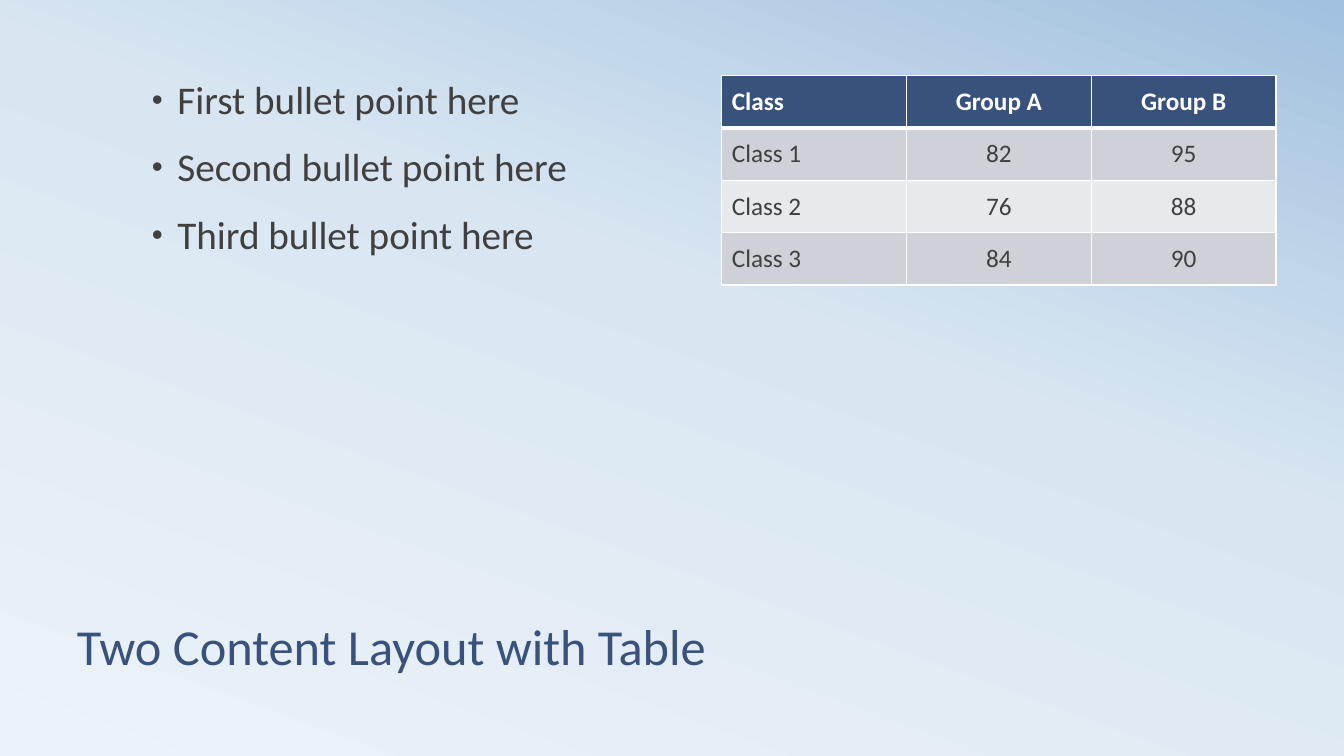
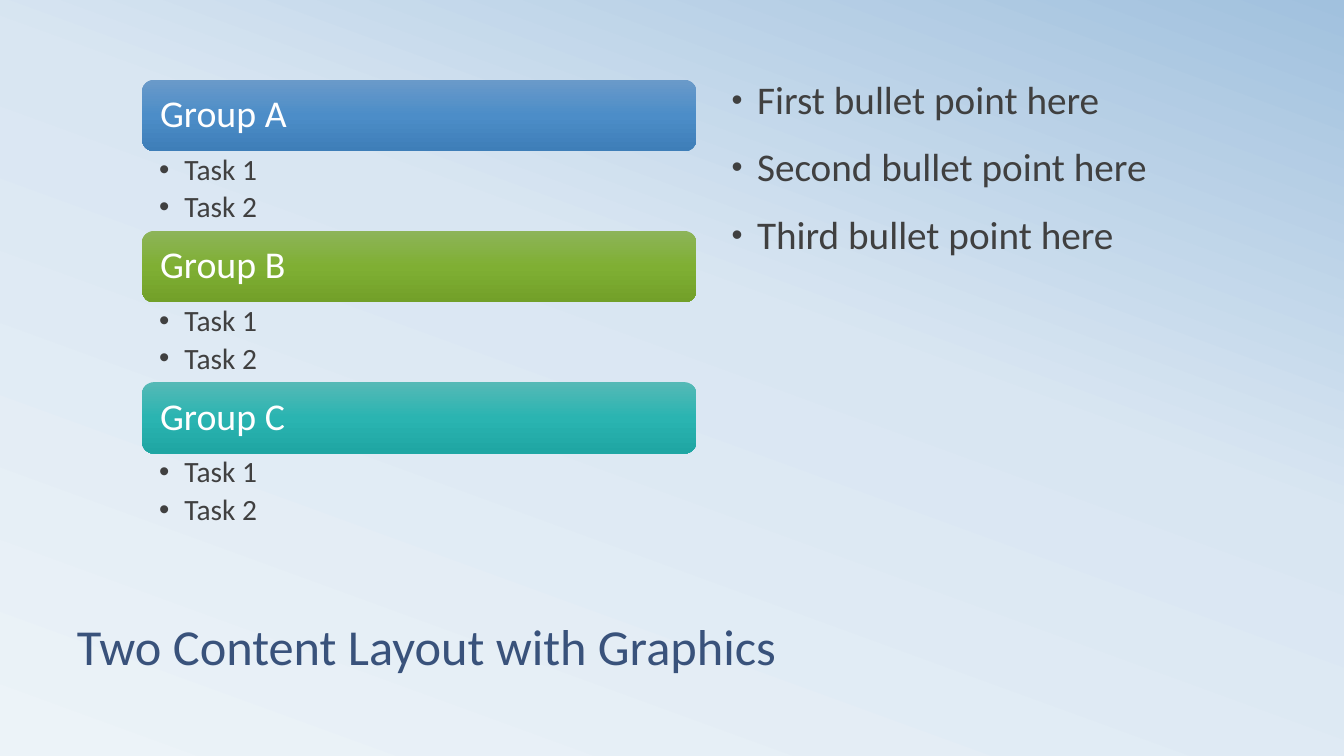
"""Builds two slides on a shared gradient: bullets with a table, and task groups with bullets."""
from dataclasses import dataclass

from lxml.etree import SubElement
from pptx import Presentation
from pptx.dml.color import RGBColor
from pptx.enum.shapes import MSO_SHAPE as Shape
from pptx.enum.text import MSO_ANCHOR as Anchor, PP_ALIGN as Align
from pptx.oxml.ns import qn
from pptx.util import Cm, Pt

TABLE_TITLE = "Two Content Layout with Table"
GROUPS_TITLE = "Two Content Layout with Graphics"
POINTS = ["First bullet point here", "Second bullet point here", "Third bullet point here"]
SCORES = [
    ("Class", "Group A", "Group B"),
    ("Class 1", "82", "95"),
    ("Class 2", "76", "88"),
    ("Class 3", "84", "90"),
]
TASKS = ["Task 1", "Task 2"]
GROUPS = [
    ("Group A", TASKS, [(0, "6A9AC9"), (50, "4C8DC8"), (100, "3E7EB8")]),
    ("Group B", TASKS, [(0, "8DB459"), (50, "7FAF33"), (100, "72A029")]),
    ("Group C", TASKS, [(0, "55B9B6"), (50, "2AB4B1"), (100, "1FA6A3")]),
]


@dataclass(frozen=True)
class Theme:
    font: str = "Calibri"
    navy: str = "39527B"
    ink: str = "404040"
    white: str = "FFFFFF"
    bands: tuple = ("E8E9EC", "CED1D7")
    backdrop: tuple = ((0, "ECF3F8"), (58, "D9E6F2"), (100, "A1C1DE"))
    title: int = 36
    point: int = 28
    group: int = 27
    task: int = 21
    cell: int = 18


THEME = Theme()
LEFT, RIGHT, TOP = Cm(3.58), Cm(18.19), Cm(1.9)
COLUMN_WIDTH, COLUMN_HEIGHT = Cm(13.97), Cm(11.63)
ROW_HEIGHT = Cm(1.32)
GROUPS_TOP, BAR_HEIGHT, TASKS_HEIGHT = Cm(2.01), Cm(1.8), Cm(2.01)
HANG = Cm(0.64)


def paint_gradient(fill, owner, stops, angle):
    fill.gradient()
    fill.gradient_angle = angle
    stop_list = next(owner.iter(qn("a:gsLst")))
    for old in list(stop_list):
        stop_list.remove(old)
    for position, color in stops:
        stop = SubElement(stop_list, qn("a:gs"), pos=str(position * 1000))
        SubElement(stop, qn("a:srgbClr"), val=color)


def write(paragraph, text, size, color, bold=False):
    run = paragraph.add_run()
    run.text = text
    run.font.name, run.font.size, run.font.bold = THEME.font, Pt(size), bold
    run.font.color.rgb = RGBColor.from_string(color)


def set_insets(frame, left, top, right, bottom):
    frame.margin_left, frame.margin_top = Cm(left), Cm(top)
    frame.margin_right, frame.margin_bottom = Cm(right), Cm(bottom)


def add_bullet(paragraph, percent):
    props = paragraph._p.get_or_add_pPr()
    props.set("marL", str(HANG))
    props.set("indent", str(-HANG))
    SubElement(SubElement(props, qn("a:buClr")), qn("a:srgbClr"), val=THEME.ink)
    SubElement(props, qn("a:buSzPct"), val=str(percent * 1000))
    SubElement(props, qn("a:buFont"), typeface="Arial")
    SubElement(props, qn("a:buChar"), char="•")


def add_list(slide, items, box, size, before=0, after=0, percent=100):
    frame = slide.shapes.add_textbox(*box).text_frame
    frame.word_wrap = True
    for index, item in enumerate(items):
        paragraph = frame.add_paragraph() if index else frame.paragraphs[0]
        paragraph.line_spacing = 0.9
        paragraph.space_before, paragraph.space_after = Pt(before), Pt(after)
        add_bullet(paragraph, percent)
        write(paragraph, item, size, THEME.ink)
    return frame


def add_points(slide, left):
    add_list(slide, POINTS, (left, TOP, COLUMN_WIDTH, COLUMN_HEIGHT), THEME.point, before=18, percent=80)


def add_titled_slide(deck, title):
    slide = deck.slides.add_slide(deck.slide_layouts[6])
    frame = slide.shapes.add_textbox(Cm(1.69), Cm(14.17), Cm(30.48), Cm(2.97)).text_frame
    frame.word_wrap = True
    frame.vertical_anchor = Anchor.BOTTOM
    frame.paragraphs[0].line_spacing = 0.8
    write(frame.paragraphs[0], title, THEME.title, THEME.navy)
    return slide


def add_borders(cell, top, bottom):
    props = cell._tc.get_or_add_tcPr()
    for side, width in (("lnL", 1), ("lnR", 1), ("lnT", top), ("lnB", bottom)):
        line = SubElement(props, qn(f"a:{side}"), w=str(Pt(width)))
        SubElement(SubElement(line, qn("a:solidFill")), qn("a:srgbClr"), val=THEME.white)


def add_scores(slide):
    table = slide.shapes.add_table(
        len(SCORES), len(SCORES[0]), RIGHT, TOP, COLUMN_WIDTH, ROW_HEIGHT * len(SCORES)
    ).table
    for row, values in enumerate(SCORES):
        header = row == 0
        table.rows[row].height = ROW_HEIGHT
        for column, value in enumerate(values):
            cell = table.cell(row, column)
            add_borders(cell, top=3 if row == 1 else 1, bottom=3 if header else 1)
            cell.fill.solid()
            cell.fill.fore_color.rgb = RGBColor.from_string(THEME.navy if header else THEME.bands[row % 2])
            cell.vertical_anchor = Anchor.MIDDLE
            paragraph = cell.text_frame.paragraphs[0]
            paragraph.alignment = Align.CENTER if column else Align.LEFT
            write(paragraph, value, THEME.cell, THEME.white if header else THEME.ink, header)


def add_groups(slide):
    for index, (name, tasks, stops) in enumerate(GROUPS):
        top = GROUPS_TOP + index * (BAR_HEIGHT + TASKS_HEIGHT)
        bar = slide.shapes.add_shape(Shape.ROUNDED_RECTANGLE, LEFT, top, COLUMN_WIDTH, BAR_HEIGHT)
        bar.shadow.inherit = False
        bar.line.fill.background()
        paint_gradient(bar.fill, bar.element, stops, 270)
        set_insets(bar.text_frame, 0.37, 0.28, 0.37, 0.28)
        bar.text_frame.vertical_anchor = Anchor.MIDDLE
        label = bar.text_frame.paragraphs[0]
        label.alignment, label.line_spacing = Align.LEFT, 0.9
        write(label, name, THEME.group, THEME.white)
        task_box = (LEFT, top + BAR_HEIGHT, COLUMN_WIDTH, TASKS_HEIGHT)
        set_insets(add_list(slide, tasks, task_box, THEME.task, after=4), 0.43, 0.1, 0.53, 0.1)


def main():
    deck = Presentation()
    deck.slide_width, deck.slide_height = Cm(33.87), Cm(19.05)
    master = deck.slide_master
    paint_gradient(master.background.fill, master.element, THEME.backdrop, 70)

    table_slide = add_titled_slide(deck, TABLE_TITLE)
    add_points(table_slide, LEFT)
    add_scores(table_slide)

    groups_slide = add_titled_slide(deck, GROUPS_TITLE)
    add_groups(groups_slide)
    add_points(groups_slide, RIGHT)

    deck.save("out.pptx")


if __name__ == "__main__":
    main()
